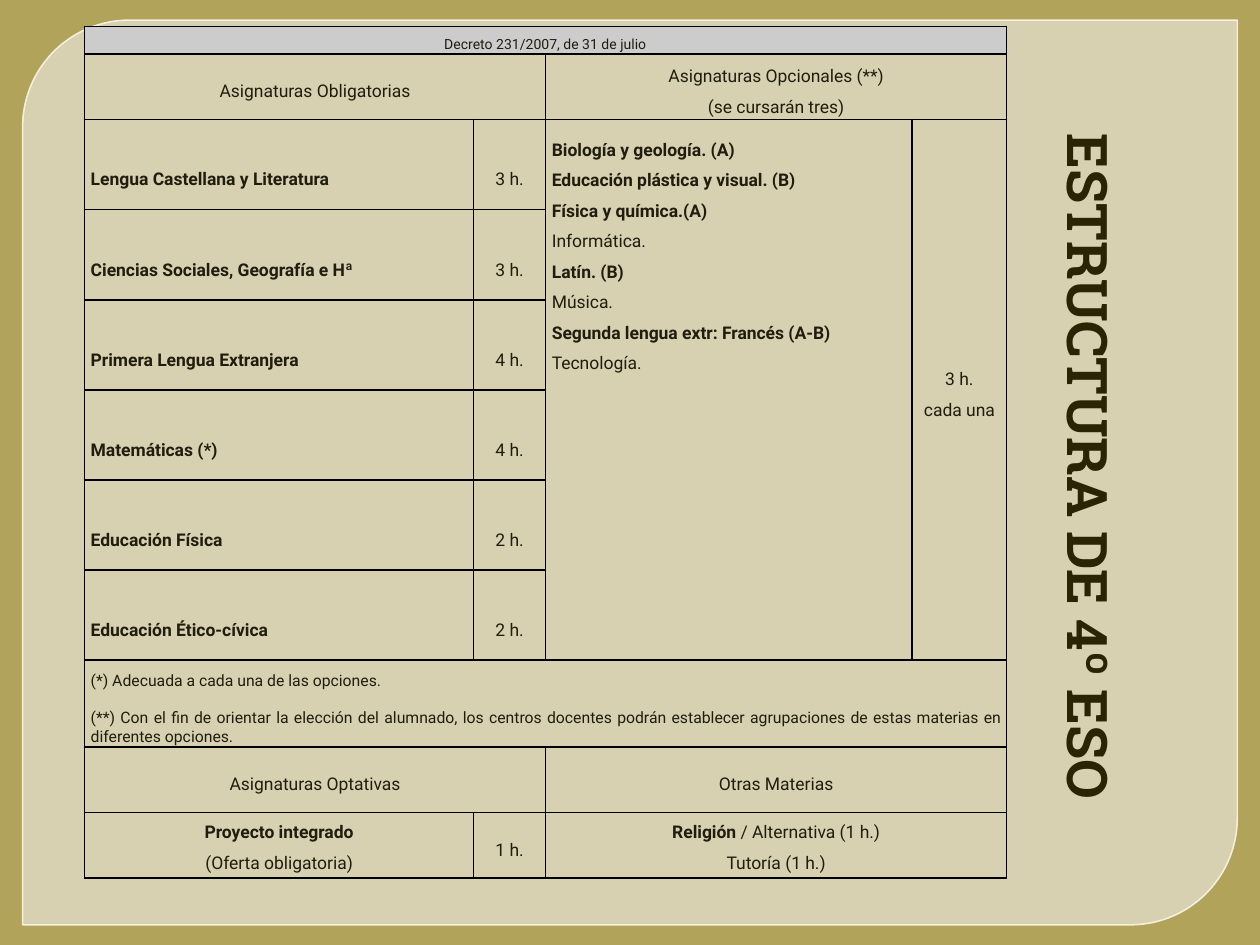
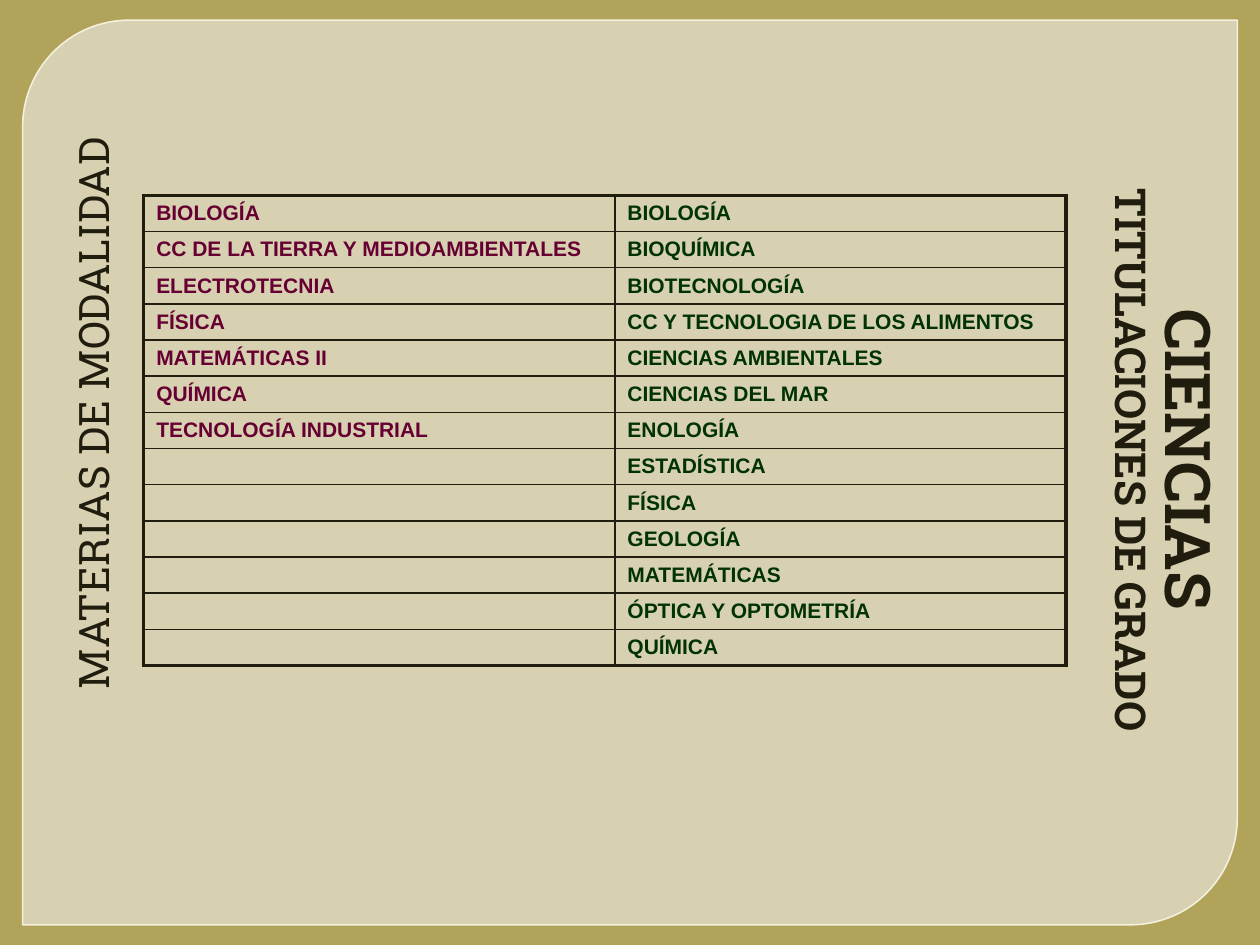
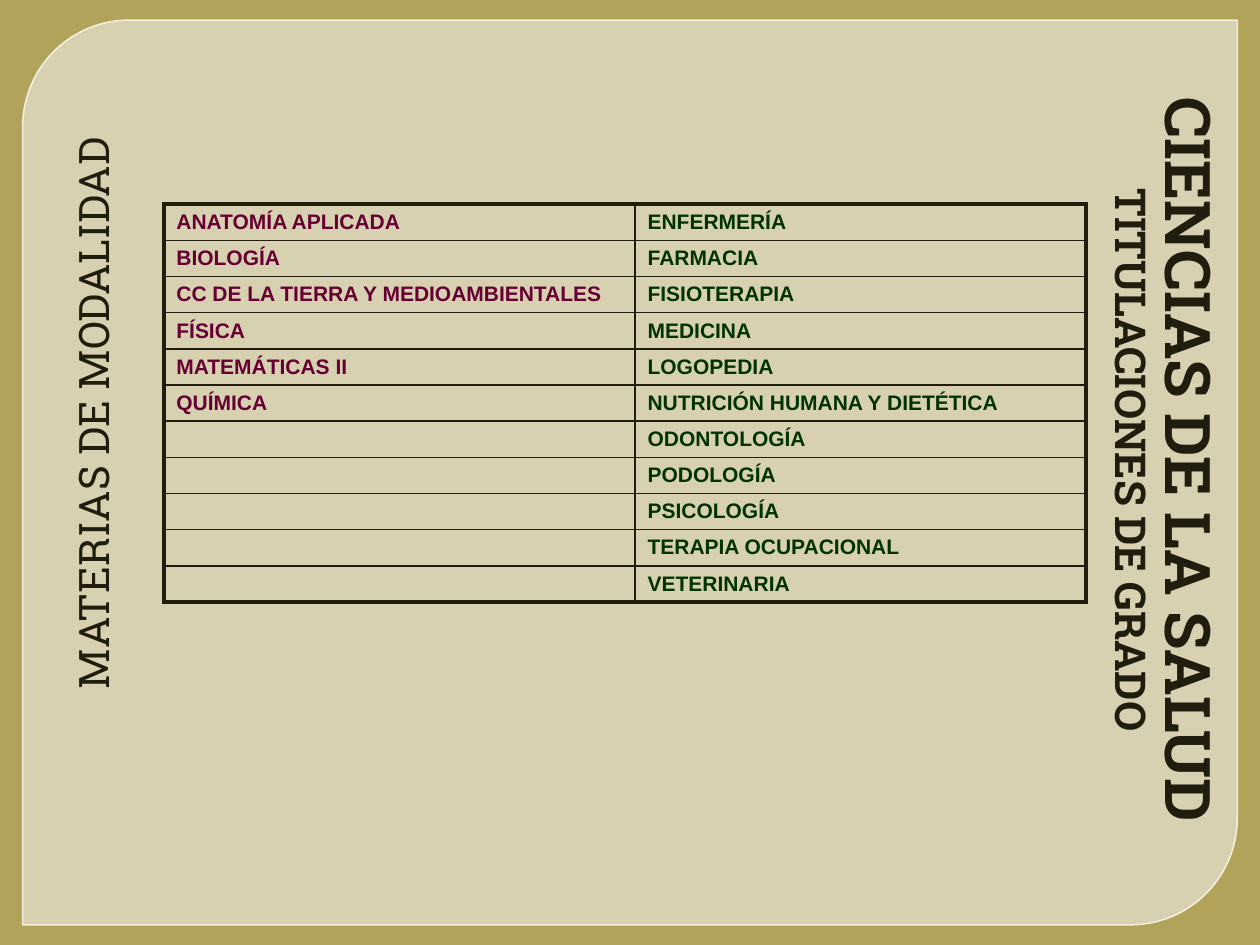
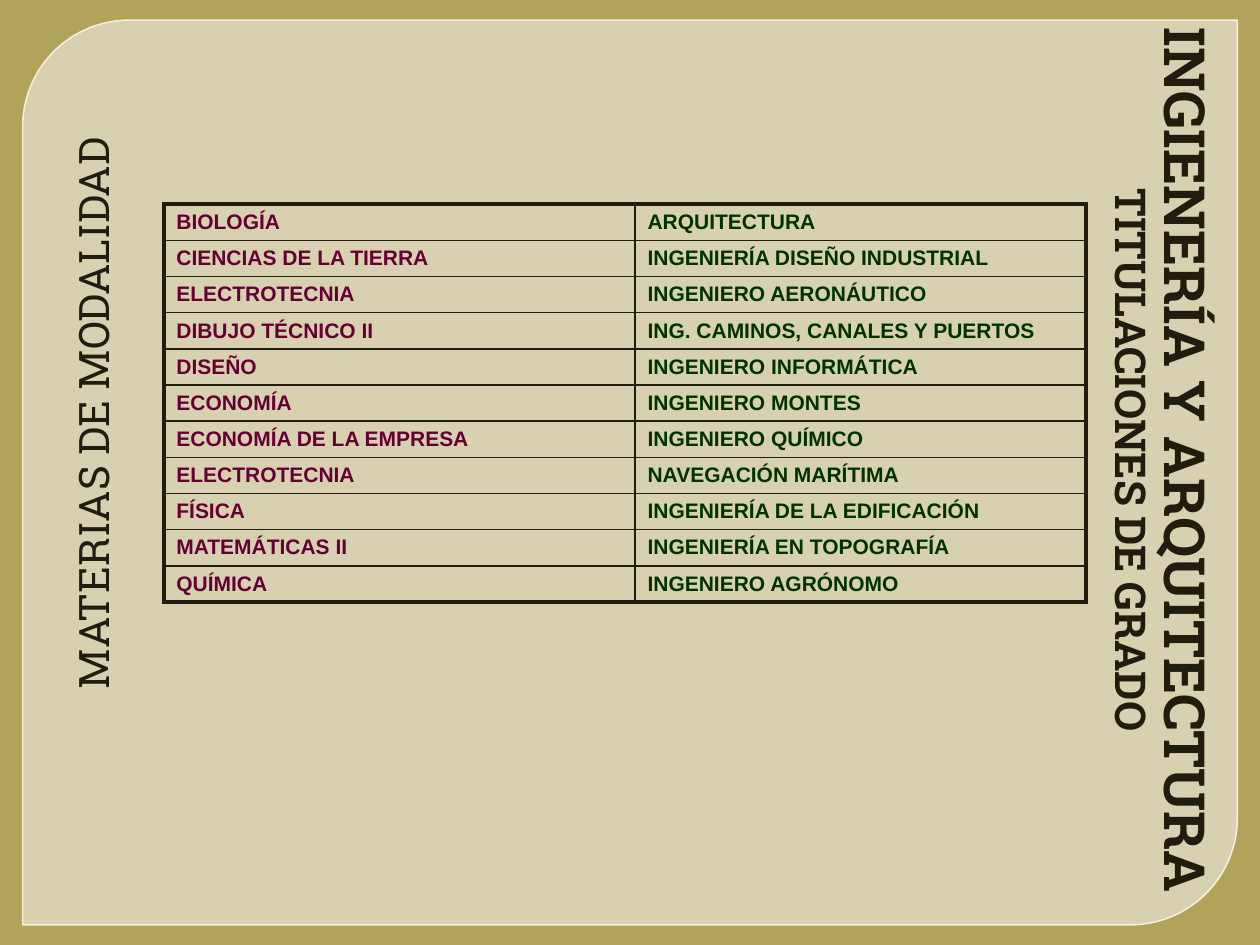
import dataclasses
import itertools
import typing

import lxml.etree
import pptx
import pptx.dml.color
import pptx.enum.shapes
import pptx.enum.text
import pptx.oxml.ns
import pptx.util

ALIGN = pptx.enum.text.PP_ALIGN
ANCHOR = pptx.enum.text.MSO_ANCHOR
GRID_COLUMNS = 100
SLIDE_WIDTH = pptx.util.Inches(10)
SLIDE_HEIGHT = pptx.util.Inches(7.5)


@dataclasses.dataclass(frozen=True)
class Theme:
    background: str = "B1A35A"
    panel: str = "EEEBE0"
    panel_line: str = "FBF8EB"
    ink: str = "201D0F"
    heading_ink: str = "2B2402"
    grid_line: str = "000000"
    banner: str = "CCCCCC"
    subject: str = "660033"
    degree: str = "003300"
    heading_font: str = "Roboto Slab"
    body_font: str = "Roboto"
    list_font: str = "Arial"
    structure_title_size: float = 32
    subtitle_size: float = 24.3
    side_label_size: float = 24
    list_size: float = 12
    cell_size: float = 10
    note_size: float = 9
    banner_size: float = 8
    thin: float = 1
    thick: float = 2.25


THEME = Theme()


@dataclasses.dataclass(frozen=True)
class Box:
    left: float
    top: float
    width: float
    height: float
    rotation: float = 0


@dataclasses.dataclass(frozen=True)
class Line:
    text: str
    bold: bool = False
    lead: str = ""
    space_before: float = 0


@dataclasses.dataclass(frozen=True)
class Entry:
    row: int
    column: int
    lines: tuple[Line, ...]
    row_span: int = 1
    column_span: int = 1
    alignment: typing.Any = ALIGN.CENTER
    anchor: typing.Any = ANCHOR.MIDDLE
    spacing: float = 1.5
    size: float = THEME.cell_size
    top_margin: float = 0
    fill: str = ""


@dataclasses.dataclass(frozen=True)
class DegreeSlide:
    title: str
    title_size: float
    left: float
    top: float
    subjects: tuple[str, ...]
    degrees: tuple[str, ...]


PANEL = Box(1.8, 1.6, 96.4, 71.8)
STRUCTURE_TITLE = Box(57.5, 30.8, 60, 7.3, 90)
DEGREE_TITLE = Box(53, 31.7, 72.9, 9.6, 90)
SIDE_LABEL = Box(-20.6, 35.6, 60, 8.7, 270)

STRUCTURE_LEFT, STRUCTURE_TOP = 6.7, 2.1
STRUCTURE_COLUMNS = (30.9, 5.7, 29.1, 7.5)
STRUCTURE_ROWS = (2.2, 5.2, *(7.15,) * 6, 6.9, 5.2, 5.2)
DEGREE_COLUMNS = (37.4, 35.8)
DEGREE_ROW = 2.87

REQUIRED_SUBJECTS = (
    ("Lengua Castellana y Literatura", "3 h."),
    ("Ciencias Sociales, Geografía e Hª", "3 h."),
    ("Primera Lengua Extranjera", "4 h."),
    ("Matemáticas (*)", "4 h."),
    ("Educación Física", "2 h."),
    ("Educación Ético-cívica", "2 h."),
)

OPTIONAL_SUBJECTS = (
    Line("Biología y geología. (A)", True),
    Line("Educación plástica y visual. (B)", True),
    Line("Física y química.(A)", True),
    Line("Informática."),
    Line("Latín. (B)", True),
    Line("Música."),
    Line("Segunda lengua extr: Francés (A-B)", True),
    Line("Tecnología."),
)

NOTES = (
    Line("(*) Adecuada a cada una de las opciones."),
    Line(
        "(**) Con el fin de orientar la elección del alumnado, los centros docentes podrán "
        "establecer agrupaciones de estas materias en diferentes opciones.",
        space_before=10.5,
    ),
)

STRUCTURE_ENTRIES = (
    Entry(0, 0, (Line("Decreto 231/2007, de 31 de julio"),), column_span=4,
          size=THEME.banner_size, fill=THEME.banner),
    Entry(1, 0, (Line("Asignaturas Obligatorias"),), column_span=2),
    Entry(1, 2, (Line("Asignaturas Opcionales (**)"), Line("(se cursarán tres)")), column_span=2),
    Entry(2, 2, OPTIONAL_SUBJECTS, row_span=6, alignment=ALIGN.LEFT, anchor=ANCHOR.TOP,
          top_margin=0.8),
    Entry(2, 3, (Line("3 h."), Line("cada una")), row_span=6),
    Entry(8, 0, NOTES, column_span=4, alignment=ALIGN.JUSTIFY, anchor=ANCHOR.TOP, spacing=1,
          size=THEME.note_size, top_margin=0.95),
    Entry(9, 0, (Line("Asignaturas Optativas"),), column_span=2),
    Entry(9, 2, (Line("Otras Materias"),), column_span=2),
    Entry(10, 0, (Line("Proyecto integrado", True), Line("(Oferta obligatoria)")),
          anchor=ANCHOR.TOP),
    Entry(10, 1, (Line("1 h."),)),
    Entry(10, 2, (Line(" / Alternativa (1 h.)", lead="Religión"), Line("Tutoría (1 h.)")),
          column_span=2, anchor=ANCHOR.TOP),
)

DEGREE_SLIDES = (
    DegreeSlide(
        "CIENCIAS", 36, 11.4, 15.5,
        ("BIOLOGÍA", "CC DE LA TIERRA Y MEDIOAMBIENTALES", "ELECTROTECNIA", "FÍSICA",
         "MATEMÁTICAS II", "QUÍMICA", "TECNOLOGÍA INDUSTRIAL"),
        ("BIOLOGÍA", "BIOQUÍMICA", "BIOTECNOLOGÍA", "CC Y TECNOLOGIA DE LOS ALIMENTOS",
         "CIENCIAS AMBIENTALES", "CIENCIAS DEL MAR", "ENOLOGÍA", "ESTADÍSTICA", "FÍSICA",
         "GEOLOGÍA", "MATEMÁTICAS", "ÓPTICA Y OPTOMETRÍA", "QUÍMICA"),
    ),
    DegreeSlide(
        "CIENCIAS DE LA SALUD", 36, 13, 16.2,
        ("ANATOMÍA APLICADA", "BIOLOGÍA", "CC DE LA TIERRA Y MEDIOAMBIENTALES", "FÍSICA",
         "MATEMÁTICAS II", "QUÍMICA"),
        ("ENFERMERÍA", "FARMACIA", "FISIOTERAPIA", "MEDICINA", "LOGOPEDIA",
         "NUTRICIÓN HUMANA Y DIETÉTICA", "ODONTOLOGÍA", "PODOLOGÍA", "PSICOLOGÍA",
         "TERAPIA OCUPACIONAL", "VETERINARIA"),
    ),
    DegreeSlide(
        "INGIENERÍA Y ARQUITECTURA", 32.4, 13, 16.2,
        ("BIOLOGÍA", "CIENCIAS DE LA TIERRA", "ELECTROTECNIA", "DIBUJO TÉCNICO II", "DISEÑO",
         "ECONOMÍA", "ECONOMÍA DE LA EMPRESA", "ELECTROTECNIA", "FÍSICA", "MATEMÁTICAS II",
         "QUÍMICA"),
        ("ARQUITECTURA", "INGENIERÍA DISEÑO INDUSTRIAL", "INGENIERO AERONÁUTICO",
         "ING. CAMINOS, CANALES Y PUERTOS", "INGENIERO INFORMÁTICA", "INGENIERO MONTES",
         "INGENIERO QUÍMICO", "NAVEGACIÓN MARÍTIMA", "INGENIERÍA DE LA EDIFICACIÓN",
         "INGENIERÍA EN TOPOGRAFÍA", "INGENIERO AGRÓNOMO"),
    ),
)


def grid(count: float) -> int:
    return round(count * SLIDE_WIDTH / GRID_COLUMNS)


def color(value: str) -> pptx.dml.color.RGBColor:
    return pptx.dml.color.RGBColor.from_string(value)


def style_font(font: typing.Any, name: str, size: float, ink: str, bold: bool) -> None:
    font.name = name
    font.size = pptx.util.Pt(size)
    font.color.rgb = color(ink)
    font.bold = bold


def place(shape: typing.Any, box: Box) -> None:
    shape.left, shape.top = grid(box.left), grid(box.top)
    shape.width, shape.height = grid(box.width), grid(box.height)
    shape.rotation = box.rotation


def set_alpha(parent: typing.Any, percent: int) -> None:
    fill = parent.find(pptx.oxml.ns.qn("a:solidFill"))
    color_element = fill.find(pptx.oxml.ns.qn("a:srgbClr"))
    alpha = lxml.etree.SubElement(color_element, pptx.oxml.ns.qn("a:alpha"))
    alpha.set("val", str(percent * 1000))


def build_master(presentation: typing.Any, slide: typing.Any) -> None:
    master = presentation.slide_master
    master.background.fill.solid()
    master.background.fill.fore_color.rgb = color(THEME.background)
    panel = slide.shapes.add_shape(
        pptx.enum.shapes.MSO_SHAPE.ROUND_2_DIAG_RECTANGLE, 0, 0, 0, 0)
    place(panel, PANEL)
    panel.adjustments[0], panel.adjustments[1] = 0.118, 0
    panel.shadow.inherit = False
    panel.fill.solid()
    panel.fill.fore_color.rgb = color(THEME.panel)
    panel.line.color.rgb = color(THEME.panel_line)
    panel.line.width = pptx.util.Pt(0.87)
    properties = panel.element.spPr
    set_alpha(properties, 65)
    set_alpha(properties.find(pptx.oxml.ns.qn("a:ln")), 88)
    master.shapes.element.insert(2, panel.element)


def prepare_frame(shape: typing.Any, box: Box, anchor: typing.Any, alignment: typing.Any,
                  top: float, bottom: float) -> typing.Any:
    place(shape, box)
    frame = shape.text_frame
    frame.word_wrap = True
    frame.auto_size = pptx.enum.text.MSO_AUTO_SIZE.NONE
    frame.vertical_anchor = anchor
    frame.margin_left = frame.margin_right = grid(1)
    frame.margin_top, frame.margin_bottom = grid(top), grid(bottom)
    paragraph = frame.paragraphs[0]
    paragraph.alignment = alignment
    paragraph.space_before = pptx.util.Pt(0)
    return paragraph


def set_borders(cell: typing.Any, ink: str, widths: dict[str, float]) -> None:
    properties = cell._tc.get_or_add_tcPr()
    for side, width in widths.items():
        line = lxml.etree.SubElement(properties, pptx.oxml.ns.qn(f"a:ln{side}"))
        line.set("w", str(int(pptx.util.Pt(width))))
        fill = lxml.etree.SubElement(line, pptx.oxml.ns.qn("a:solidFill"))
        lxml.etree.SubElement(fill, pptx.oxml.ns.qn("a:srgbClr")).set("val", ink)


def add_grid_table(slide: typing.Any, left: float, top: float, columns: tuple[float, ...],
                   rows: tuple[float, ...], ink: str, outer_width: float) -> typing.Any:
    table = slide.shapes.add_table(
        len(rows), len(columns), grid(left), grid(top),
        grid(sum(columns)), grid(sum(rows))).table
    table.first_row = table.horz_banding = False
    for column, width in zip(table.columns, columns):
        column.width = grid(width)
    for row, height in zip(table.rows, rows):
        row.height = grid(height)
    last_row, last_column = len(rows) - 1, len(columns) - 1
    for row, column in itertools.product(range(len(rows)), range(len(columns))):
        cell = table.cell(row, column)
        on_edge = {"L": column == 0, "R": column == last_column,
                   "T": row == 0, "B": row == last_row}
        set_borders(cell, ink, {side: outer_width if outer else THEME.thin
                                for side, outer in on_edge.items()})
        cell.fill.background()
    return table


def fill_entry(table: typing.Any, entry: Entry) -> None:
    cell = table.cell(entry.row, entry.column)
    if entry.row_span * entry.column_span > 1:
        cell.merge(table.cell(entry.row + entry.row_span - 1,
                              entry.column + entry.column_span - 1))
    cell.vertical_anchor = entry.anchor
    cell.margin_left = cell.margin_right = grid(0.5)
    cell.margin_top, cell.margin_bottom = grid(entry.top_margin), 0
    if entry.fill:
        cell.fill.solid()
        cell.fill.fore_color.rgb = color(entry.fill)
    frame = cell.text_frame
    for index, line in enumerate(entry.lines):
        paragraph = frame.add_paragraph() if index else frame.paragraphs[0]
        paragraph.alignment = entry.alignment
        paragraph.line_spacing = entry.spacing
        paragraph.space_before = pptx.util.Pt(line.space_before)
        style_font(paragraph.font, THEME.body_font, entry.size, THEME.ink, line.bold)
        if line.lead:
            lead = paragraph.add_run()
            lead.text = line.lead
            lead.font.bold = True
        paragraph.add_run().text = line.text


def build_structure_slide(slide: typing.Any) -> None:
    paragraph = prepare_frame(slide.shapes.title, STRUCTURE_TITLE, ANCHOR.BOTTOM, ALIGN.RIGHT,
                              0.5, 0)
    paragraph.text = "ESTRUCTURA DE 4º ESO"
    style_font(paragraph.font, THEME.heading_font, THEME.structure_title_size,
               THEME.heading_ink, True)
    table = add_grid_table(slide, STRUCTURE_LEFT, STRUCTURE_TOP, STRUCTURE_COLUMNS,
                           STRUCTURE_ROWS, THEME.grid_line, THEME.thin)
    for entry in STRUCTURE_ENTRIES:
        fill_entry(table, entry)
    for row, (subject, hours) in enumerate(REQUIRED_SUBJECTS, start=2):
        fill_entry(table, Entry(row, 0, (Line(subject, True),), alignment=ALIGN.LEFT,
                                spacing=2.5))
        fill_entry(table, Entry(row, 1, (Line(hours),), spacing=2.5))


def build_degree_slide(slide: typing.Any, content: DegreeSlide) -> None:
    title = prepare_frame(slide.shapes.title, DEGREE_TITLE, ANCHOR.BOTTOM, ALIGN.CENTER,
                          0.5, 3.15)
    title.line_spacing = 0.9
    style_font(title.font, THEME.heading_font, content.title_size, THEME.ink, True)
    title.add_run().text = content.title
    title.add_line_break()
    subtitle = title.add_run()
    subtitle.text = "TITULACIONES DE GRADO"
    subtitle.font.size = pptx.util.Pt(THEME.subtitle_size)

    label = prepare_frame(slide.placeholders[1], SIDE_LABEL, ANCHOR.TOP, ALIGN.RIGHT, 0.3, 0.5)
    label.text = "MATERIAS DE MODALIDAD"
    style_font(label.font, THEME.heading_font, THEME.side_label_size, THEME.ink, False)

    table = add_grid_table(slide, content.left, content.top, DEGREE_COLUMNS,
                           (DEGREE_ROW,) * len(content.degrees), THEME.ink, THEME.thick)
    pairs = itertools.zip_longest(content.subjects, content.degrees, fillvalue="")
    for row, texts in enumerate(pairs):
        for column, (text, ink) in enumerate(zip(texts, (THEME.subject, THEME.degree))):
            paragraph = table.cell(row, column).text_frame.paragraphs[0]
            if text:
                paragraph.text = text
            style_font(paragraph.font, THEME.list_font, THEME.list_size, ink, True)


def main() -> None:
    presentation = pptx.Presentation()
    presentation.slide_width, presentation.slide_height = SLIDE_WIDTH, SLIDE_HEIGHT
    title_only = presentation.slide_layouts.get_by_name("Title Only")
    title_and_body = presentation.slide_layouts.get_by_name("Section Header")
    structure = presentation.slides.add_slide(title_only)
    build_master(presentation, structure)
    build_structure_slide(structure)
    for content in DEGREE_SLIDES:
        build_degree_slide(presentation.slides.add_slide(title_and_body), content)
    presentation.save("out.pptx")


if __name__ == "__main__":
    main()
